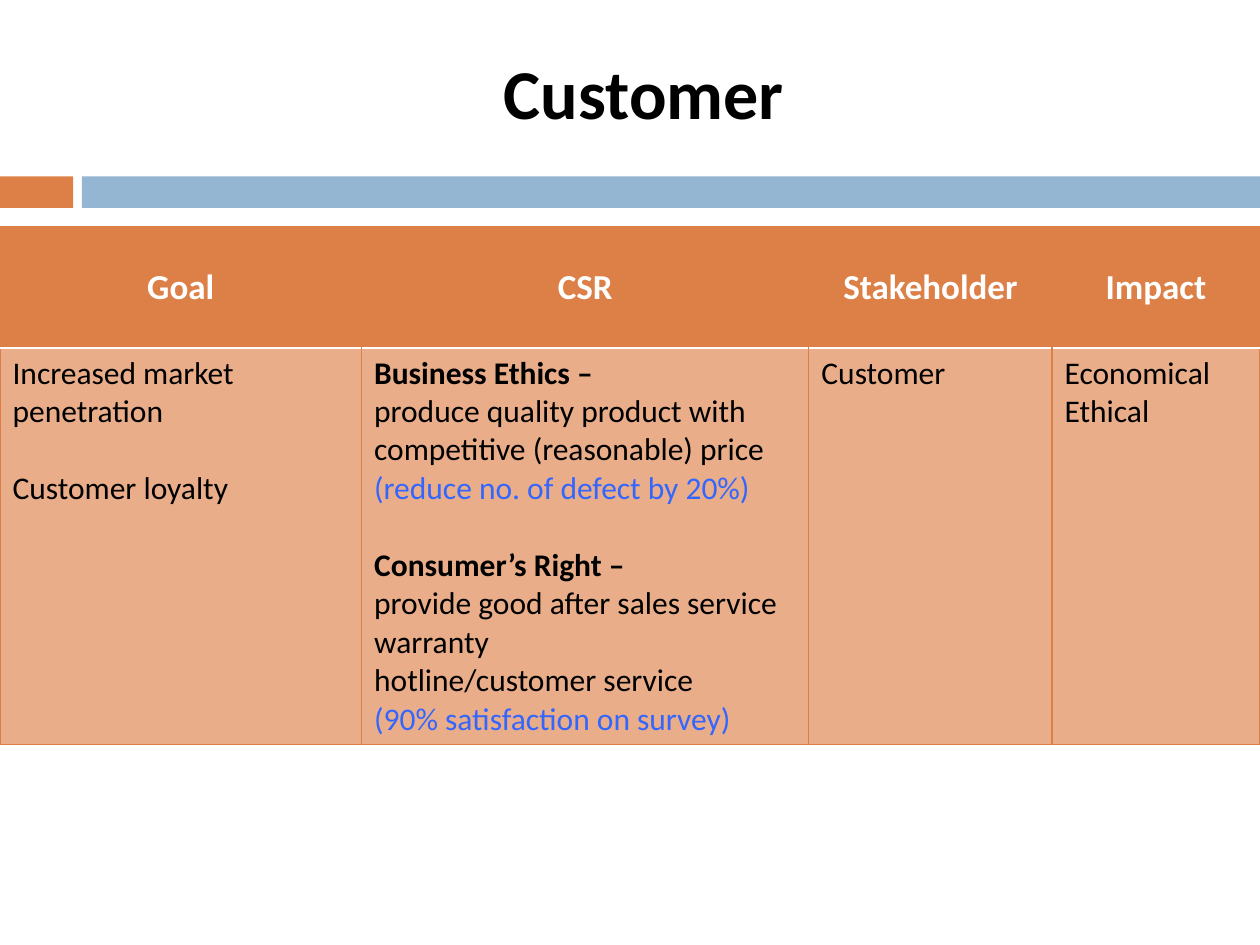
from dataclasses import dataclass

from lxml.etree import SubElement
from pptx import Presentation
from pptx.dml.color import RGBColor
from pptx.enum.shapes import MSO_SHAPE
from pptx.enum.text import MSO_ANCHOR, PP_ALIGN
from pptx.oxml.ns import qn
from pptx.util import Inches, Pt


@dataclass(frozen=True)
class Theme:
    font: str = "Calibri"
    orange: str = "DD8047"
    blue: str = "94B6D2"
    target: str = "3366FF"
    black: str = "000000"
    white: str = "FFFFFF"
    title_size: int = 40
    header_size: int = 20
    body_size: int = 18
    section_gap: int = 22
    body_opacity: int = 64  # percent
    grid_line: float = 0.79
    header_line: float = 1.5


THEME = Theme()

TITLE = "Customer"
# Column heading, width in inches, sections of (line, role)
COLUMNS = [
    ("Goal", 2.87, [
        [("Increased market penetration", "plain")],
        [("Customer loyalty", "plain")],
    ]),
    ("CSR", 3.55, [
        [("Business Ethics –", "bold"),
         ("produce quality product with competitive (reasonable) price", "plain"),
         ("(reduce no. of defect by 20%)", "target")],
        [("Consumer’s Right –", "bold"),
         ("provide good after sales service", "plain"),
         ("warranty", "plain"),
         ("hotline/customer service", "plain"),
         ("(90% satisfaction on survey)", "target")],
    ]),
    ("Stakeholder", 1.93, [[("Customer", "plain")]]),
    ("Impact", 1.65, [[("Economical", "plain"), ("Ethical", "plain")]]),
]
ROW_HEIGHTS = (0.96, 3.15)
TABLE_TOP = 1.8
# Left, width, colour of the bars under the title
BARS = [(0, 0.58, THEME.orange), (0.65, 9.35, THEME.blue)]
BAR_TOP, BAR_HEIGHT = 1.4, 0.25


def style(paragraph, size, color, bold):
    for run in paragraph.runs:
        run.font.name = THEME.font
        run.font.size = Pt(size)
        run.font.bold = bold
        run.font.color.rgb = RGBColor.from_string(color)


def paint(cell, opacity, borders):
    """Fill a cell and draw its borders, given as {edge tag: (colour, points)}."""
    properties = cell._tc.get_or_add_tcPr()
    for edge in ("lnL", "lnR", "lnT", "lnB"):
        if edge in borders:
            color, width = borders[edge]
            line = SubElement(properties, qn(f"a:{edge}"), w=str(Pt(width)))
            solid = SubElement(line, qn("a:solidFill"))
            SubElement(solid, qn("a:srgbClr"), val=color)
        else:
            line = SubElement(properties, qn(f"a:{edge}"), w="0")
            SubElement(line, qn("a:noFill"))
    cell.fill.solid()
    cell.fill.fore_color.rgb = RGBColor.from_string(THEME.orange)
    if opacity < 100:
        color = properties.find(qn("a:solidFill")).find(qn("a:srgbClr"))
        SubElement(color, qn("a:alpha"), val=str(opacity * 1000))


def fill_header(cell, heading, outer_edges):
    cell.text_frame.text = heading
    cell.vertical_anchor = MSO_ANCHOR.MIDDLE
    paragraph = cell.text_frame.paragraphs[0]
    paragraph.alignment = PP_ALIGN.CENTER
    style(paragraph, THEME.header_size, THEME.white, True)
    borders = {edge: (THEME.orange, THEME.grid_line) for edge in outer_edges}
    borders["lnB"] = (THEME.white, THEME.header_line)
    paint(cell, 100, borders)


def fill_body(cell, sections):
    lines = [line for section in sections for line in section]
    cell.text_frame.text = "\n".join(text for text, _ in lines)
    section_starts = [section[0] for section in sections[1:]]
    for paragraph, line in zip(cell.text_frame.paragraphs, lines):
        role = line[1]
        color = THEME.target if role == "target" else THEME.black
        style(paragraph, THEME.body_size, color, role == "bold")
        if line in section_starts:
            paragraph.space_before = Pt(THEME.section_gap)
    grid = (THEME.orange, THEME.grid_line)
    paint(cell, THEME.body_opacity, {
        "lnL": grid, "lnR": grid, "lnB": grid,
        "lnT": (THEME.white, THEME.header_line),
    })


def add_bars(slide):
    for left, width, color in BARS:
        bar = slide.shapes.add_shape(
            MSO_SHAPE.RECTANGLE, Inches(left), Inches(BAR_TOP),
            Inches(width), Inches(BAR_HEIGHT))
        bar.shadow.inherit = False
        bar.fill.solid()
        bar.fill.fore_color.rgb = RGBColor.from_string(color)
        bar.line.fill.background()


def add_csr_table(slide):
    total_width = sum(width for _, width, _ in COLUMNS)
    table = slide.shapes.add_table(
        len(ROW_HEIGHTS), len(COLUMNS), Inches(0), Inches(TABLE_TOP),
        Inches(total_width), Inches(sum(ROW_HEIGHTS))).table
    table.horz_banding = False
    for row, height in zip(table.rows, ROW_HEIGHTS):
        row.height = Inches(height)
    last = len(COLUMNS) - 1
    for index, (heading, width, sections) in enumerate(COLUMNS):
        table.columns[index].width = Inches(width)
        outer_edges = ["lnT"]
        if index == 0:
            outer_edges.append("lnL")
        if index == last:
            outer_edges.append("lnR")
        fill_header(table.cell(0, index), heading, outer_edges)
        fill_body(table.cell(1, index), sections)


def set_title(slide):
    title = slide.shapes.title
    title.left, title.top = Inches(1.71), Inches(0.34)
    title.width, title.height = Inches(6.8), Inches(1.08)
    title.text_frame.text = TITLE
    title.text_frame.vertical_anchor = MSO_ANCHOR.TOP
    paragraph = title.text_frame.paragraphs[0]
    paragraph.alignment = PP_ALIGN.CENTER
    style(paragraph, THEME.title_size, THEME.black, True)


def main():
    presentation = Presentation()
    presentation.slide_width = Inches(10)
    presentation.slide_height = Inches(7.5)
    slide = presentation.slides.add_slide(presentation.slide_layouts[5])
    add_bars(slide)
    add_csr_table(slide)
    set_title(slide)
    presentation.save("out.pptx")


if __name__ == "__main__":
    main()
